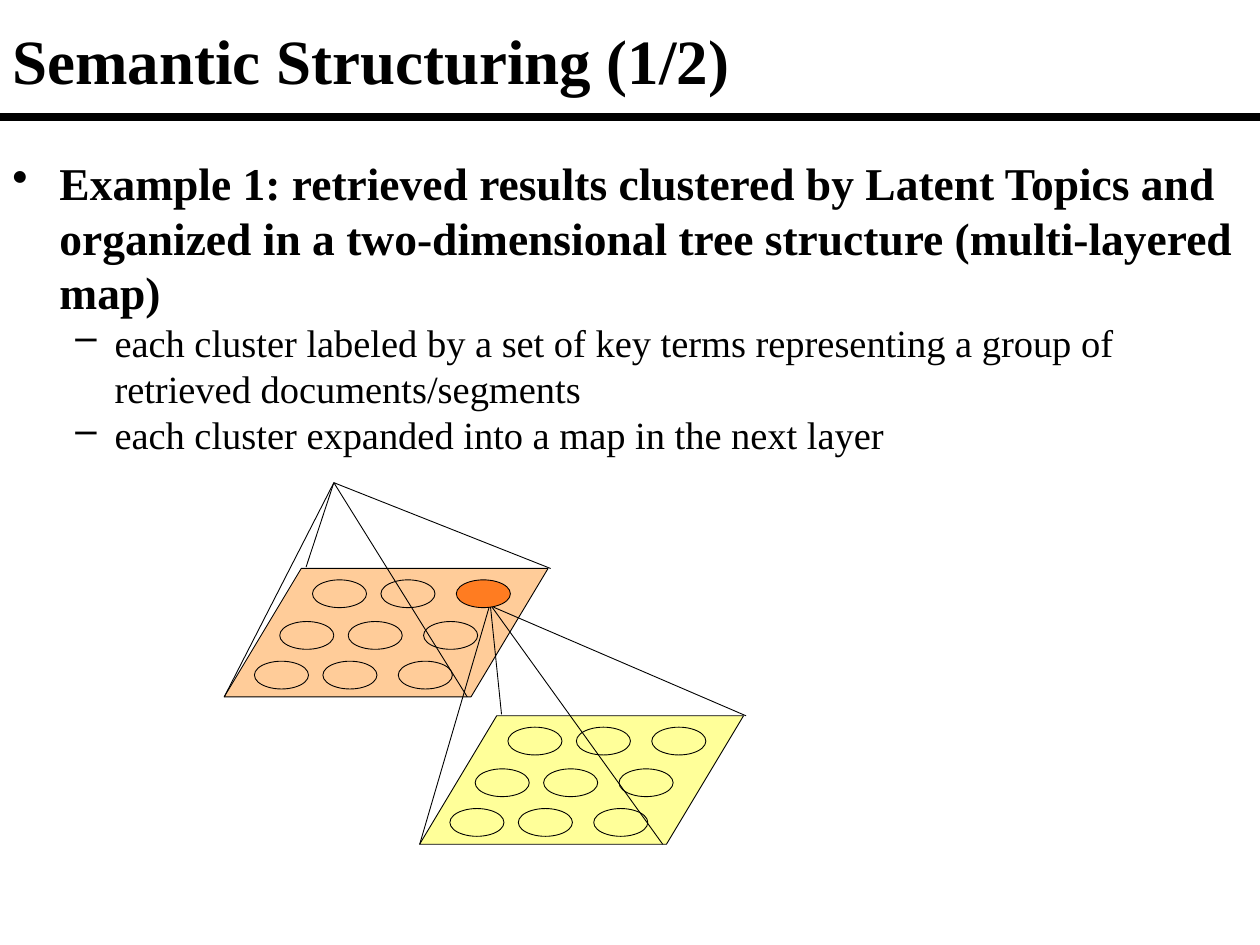
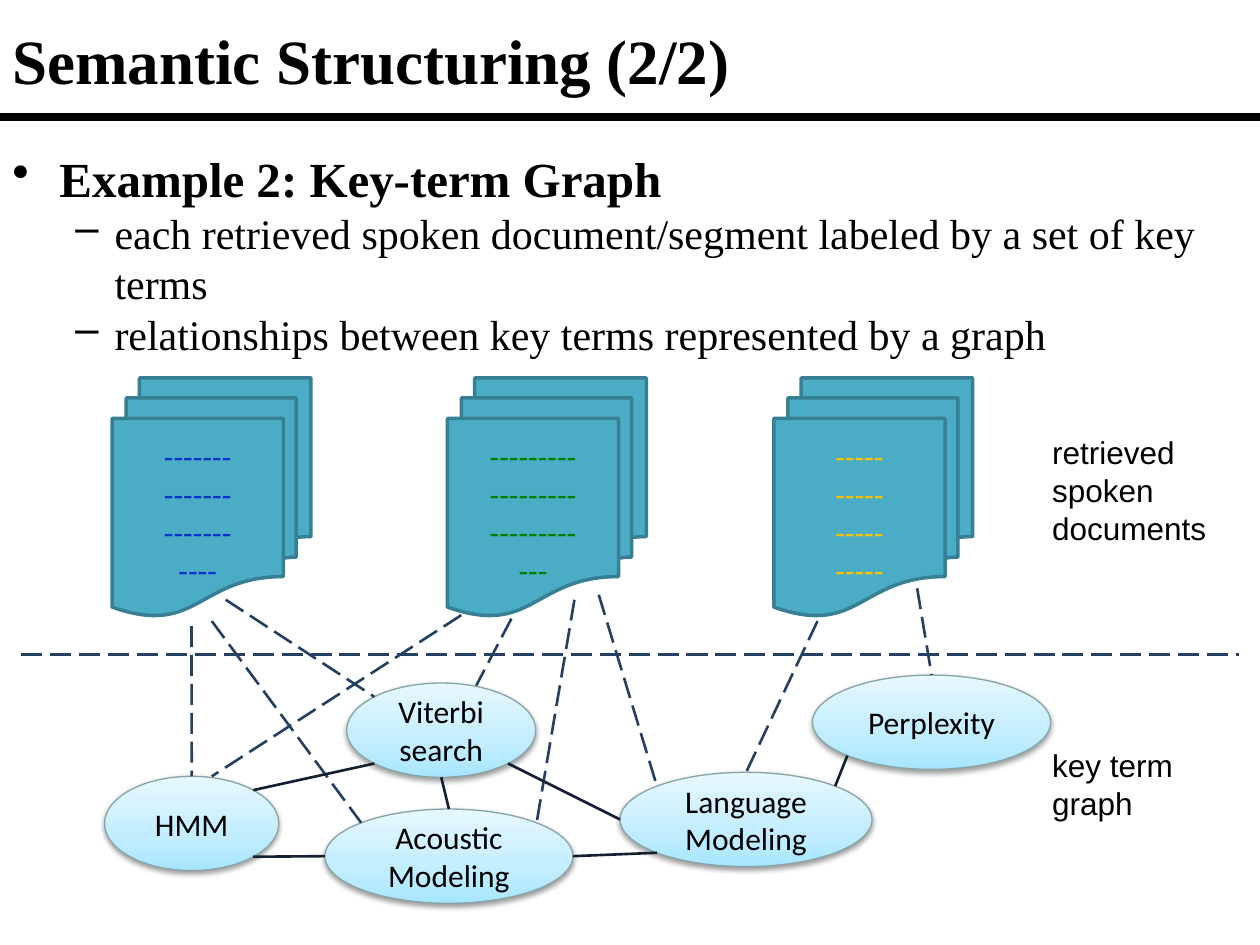
from copy import deepcopy
from math import cos, radians, sin

from pptx import Presentation
from pptx.dml.color import RGBColor
from pptx.enum.dml import MSO_LINE
from pptx.enum.shapes import MSO_CONNECTOR, MSO_SHAPE
from pptx.enum.text import MSO_ANCHOR, MSO_AUTO_SIZE, PP_ALIGN
from pptx.oxml import parse_xml
from pptx.oxml.ns import nsdecls, qn
from pptx.oxml.xmlchemy import OxmlElement
from pptx.util import Cm, Pt

BLACK = RGBColor(0x00, 0x00, 0x00)
PEACH = RGBColor(0xFF, 0xCC, 0x99)
YELLOW = RGBColor(0xFF, 0xFF, 0x99)
ORANGE = RGBColor(0xFF, 0x66, 0x00)
TEAL = RGBColor(0x4B, 0xAC, 0xC6)
DARK_TEAL = RGBColor(0x37, 0x7F, 0x92)
NAVY = RGBColor(0x25, 0x40, 0x61)
INK = RGBColor(0x12, 0x20, 0x31)
TERM_LINE = RGBColor(0x89, 0xA4, 0xA7)
GOLD = RGBColor(0xFF, 0xC0, 0x00)
GREEN = RGBColor(0x00, 0x80, 0x00)
BLUE = RGBColor(0x00, 0x33, 0xCC)
TERM_STOPS = [
    (0, RGBColor(0xA7, 0xE6, 0xFF)),
    (0.35, RGBColor(0xC1, 0xED, 0xFF)),
    (1, RGBColor(0xE7, 0xF8, 0xFF)),
]

SERIF = "Times New Roman"
SANS = "Arial"
SHAPE_FONT = "Calibri"

# Bullet character, left margin and hanging indent for each level
BULLETS = [("•", Cm(0.95), Cm(-0.95)), ("–", Cm(2.06), Cm(-0.79))]

# Cells and pyramid feet, measured from the top left of a map
CELL_ROWS = [(1.78, 0.23), (1.12, 1.07), (0.61, 1.87)]
CELL_COLUMNS = [0, 1.38, 2.9]
FEET = [(0, 2.59), (1.65, -0.03), (4.9, 2.59), (6.58, 0)]

# Connection sites of an ellipse, counterclockwise
TOP, TOP_LEFT, LEFT, BOTTOM_LEFT, BOTTOM, BOTTOM_RIGHT, RIGHT, TOP_RIGHT = range(8)


def write(p, text, size=18, font=SHAPE_FONT, color=BLACK, bold=False,
          align=PP_ALIGN.LEFT):
    p.alignment = align
    r = p.add_run()
    r.text = text
    r.font.size = Pt(size)
    r.font.name = font
    r.font.color.rgb = color
    r.font.bold = bold


def write_lines(tf, lines, **style):
    for i, text in enumerate(lines):
        p = tf.add_paragraph() if i else tf.paragraphs[0]
        write(p, text, **style)


def add_text_box(s, x, y, w, h):
    tf = s.shapes.add_textbox(Cm(x), Cm(y), Cm(w), Cm(h)).text_frame
    tf.word_wrap = True
    return tf


def add_shape(s, kind, x, y, w, h, fill=None, line=BLACK, width=0.5):
    sp = s.shapes.add_shape(kind, Cm(x), Cm(y), Cm(w), Cm(h))
    sp.shadow.inherit = False
    if fill is None:
        sp.fill.background()
    else:
        sp.fill.solid()
        sp.fill.fore_color.rgb = fill
    sp.line.color.rgb = line
    sp.line.width = Pt(width)
    sp.text_frame.vertical_anchor = MSO_ANCHOR.MIDDLE
    return sp


def add_line(s, start, end, color=BLACK, width=0.5, dash=None):
    line = s.shapes.add_connector(MSO_CONNECTOR.STRAIGHT,
                                  *(Cm(v) for v in (*start, *end)))
    line.line.color.rgb = color
    line.line.width = Pt(width)
    if dash:
        line.line.dash_style = dash
    line.element.spPr.append(OxmlElement("a:effectLst"))
    return line


def add_frame(prs, title):
    """Add a blank slide with the shared title and the rule below it."""
    s = prs.slides.add_slide(prs.slide_layouts[6])
    tf = add_text_box(s, 0, 0.2, 25.37, 2.01)
    tf.vertical_anchor = MSO_ANCHOR.MIDDLE
    write(tf.paragraphs[0], title, size=36, font=SERIF, bold=True)
    add_line(s, (0, 2.36), (25.4, 2.36), width=4.5)
    return s


def add_bullet(p, level):
    char, margin, indent = BULLETS[level]
    p.level = level
    pPr = p._p.get_or_add_pPr()
    pPr.set("marL", str(margin))
    pPr.set("indent", str(indent))
    bullet = OxmlElement("a:buChar")
    bullet.set("char", char)
    pPr.append(bullet)


def add_body(s, y, h, size, heading, points):
    """Add a bold bullet with dashed points, four points smaller, below it."""
    tf = add_text_box(s, 0, y, 25.37, h)
    tf.auto_size = MSO_AUTO_SIZE.SHAPE_TO_FIT_TEXT
    p = tf.paragraphs[0]
    p.space_before = Pt(0.2 * size)
    write(p, heading, size=size, font=SERIF, bold=True)
    add_bullet(p, 0)
    for point in points:
        p = tf.add_paragraph()
        write(p, point, size=size - 4, font=SERIF)
        add_bullet(p, 1)


def set_alpha(sp, percent):
    color = sp.element.spPr.find(qn("a:solidFill"))[0]
    alpha = OxmlElement("a:alpha")
    alpha.set("val", str(percent * 1000))
    color.append(alpha)


def add_map(s, x, y, fill, apex, apex_step=0, selected=None):
    """Add a layer of nine clusters and the pyramid that opens onto it."""
    plate = add_shape(s, MSO_SHAPE.PARALLELOGRAM, x, y, 6.53, 2.59, fill)
    plate.adjustments[0] = 0.6
    for row, (row_x, row_y) in enumerate(CELL_ROWS):
        for column, dx in enumerate(CELL_COLUMNS):
            chosen = (row, column) == selected
            cell = add_shape(s, MSO_SHAPE.OVAL, x + row_x + dx, y + row_y,
                             1.09, 0.56, ORANGE if chosen else None)
            if chosen:
                set_alpha(cell, 78)
    for i, (dx, dy) in enumerate(FEET):
        add_line(s, (apex[0] + i * apex_step, apex[1]), (x + dx, y + dy))


def add_documents(s, x, lines, color):
    sp = add_shape(s, MSO_SHAPE.FLOWCHART_MULTIDOCUMENT, x, 7.62, 4.01, 4.8,
                   TEAL, DARK_TEAL, 2)
    write_lines(sp.text_frame, lines, color=color, align=PP_ALIGN.CENTER)


def add_term(s, name, x, y, w):
    sp = add_shape(s, MSO_SHAPE.OVAL, x, y, w, 1.9, line=TERM_LINE, width=0.75)
    sp.fill.gradient()
    sp.fill.gradient_angle = 90
    spPr = sp.element.spPr
    stops = spPr.find(".//" + qn("a:gsLst"))
    stops.insert(1, deepcopy(stops[0]))
    for stop, (position, color) in zip(sp.fill.gradient_stops, TERM_STOPS):
        stop.position = position
        stop.color.rgb = color
    spPr.find(qn("a:effectLst")).append(parse_xml(
        f'<a:outerShdw {nsdecls("a")} blurRad="40000" dist="20000" '
        'dir="5400000" rotWithShape="0"><a:srgbClr val="000000">'
        '<a:alpha val="38000"/></a:srgbClr></a:outerShdw>'))
    write_lines(sp.text_frame, [name], align=PP_ALIGN.CENTER)
    return sp


def site_point(sp, site):
    """Return the place of an ellipse's connection site in centimetres."""
    angle = radians(45 * site)
    rx, ry = sp.width.cm / 2, sp.height.cm / 2
    return (sp.left.cm + rx - rx * sin(angle),
            sp.top.cm + ry - ry * cos(angle))


def link_to_term(s, start, term, site, **style):
    line = add_line(s, start, site_point(term, site), width=1.5, **style)
    if site == TOP:
        line.end_connect(term, TOP)


def add_label(s, text, y, w, h):
    tf = add_text_box(s, 20.96, y, w, h)
    tf.auto_size = MSO_AUTO_SIZE.SHAPE_TO_FIT_TEXT
    write(tf.paragraphs[0], text, font=SANS)


def build_layered_map(prs):
    s = add_frame(prs, "Semantic Structuring (1/2)")
    add_body(s, 3, 6.4, 26,
             "Example 1: retrieved results clustered by Latent Topics and "
             "organized in a two-dimensional tree structure (multi-layered map)",
             ["each cluster labeled by a set of key terms representing a group "
              "of retrieved documents/segments",
              "each cluster expanded into a map in the next layer"])
    add_map(s, 4.52, 11.46, PEACH, apex=(6.73, 9.73), selected=(0, 2))
    add_map(s, 8.46, 14.43, YELLOW, apex=(9.86, 12.24), apex_step=0.03)


def build_key_term_graph(prs):
    s = add_frame(prs, "Semantic Structuring (2/2)")
    add_body(s, 2.87, 4.52, 28, "Example 2: Key-term Graph",
             ["each retrieved spoken document/segment labeled by a set of key "
              "terms",
              "relationships between key terms represented by a graph"])
    add_documents(s, 15.6, ["-----"] * 4, GOLD)
    add_documents(s, 9.02, ["---------"] * 3 + ["---"], GREEN)
    add_documents(s, 2.26, ["-------"] * 3 + ["----"], BLUE)
    add_label(s, "retrieved spoken documents", 8.61, 3.71, 2.57)
    add_label(s, "key term graph", 14.91, 2.97, 1.7)

    acoustic = add_term(s, "Acoustic Modeling", 6.55, 16.31, 5)
    viterbi = add_term(s, "Viterbi search", 6.99, 13.77, 3.81)
    hmm = add_term(s, "HMM", 2.11, 15.65, 3.51)
    language = add_term(s, "Language Modeling", 12.5, 15.57, 5.08)
    perplexity = add_term(s, "Perplexity", 16.38, 13.61, 4.8)

    dashed = {"color": NAVY, "dash": MSO_LINE.LONG_DASH}
    for start, end in [((0.43, 13.2), (24.97, 13.2)),
                       ((10.31, 12.47), (9.6, 13.82)),
                       ((9.3, 12.4), (4.27, 15.65))]:
        add_line(s, start, end, width=1.5, **dashed)
    for start, term, site in [((3.86, 12.62), hmm, TOP),
                              ((4.55, 12.09), viterbi, TOP_LEFT),
                              ((4.27, 12.52), acoustic, TOP_LEFT),
                              ((11.58, 12.09), acoustic, TOP_RIGHT),
                              ((16.48, 12.52), language, TOP),
                              ((12.07, 11.99), language, TOP_LEFT),
                              ((18.49, 11.86), perplexity, TOP)]:
        link_to_term(s, start, term, site, **dashed)
    for first, first_site, second, second_site in [
            (hmm, TOP_RIGHT, viterbi, BOTTOM_LEFT),
            (viterbi, BOTTOM, acoustic, TOP),
            (hmm, BOTTOM_RIGHT, acoustic, LEFT),
            (viterbi, BOTTOM_RIGHT, language, LEFT),
            (acoustic, RIGHT, language, BOTTOM_LEFT),
            (language, TOP_RIGHT, perplexity, BOTTOM_LEFT)]:
        link_to_term(s, site_point(first, first_site), second, second_site,
                     color=INK)


def main():
    prs = Presentation()
    prs.slide_width, prs.slide_height = Cm(25.4), Cm(19.05)
    build_layered_map(prs)
    build_key_term_graph(prs)
    prs.save("out.pptx")


if __name__ == "__main__":
    main()
